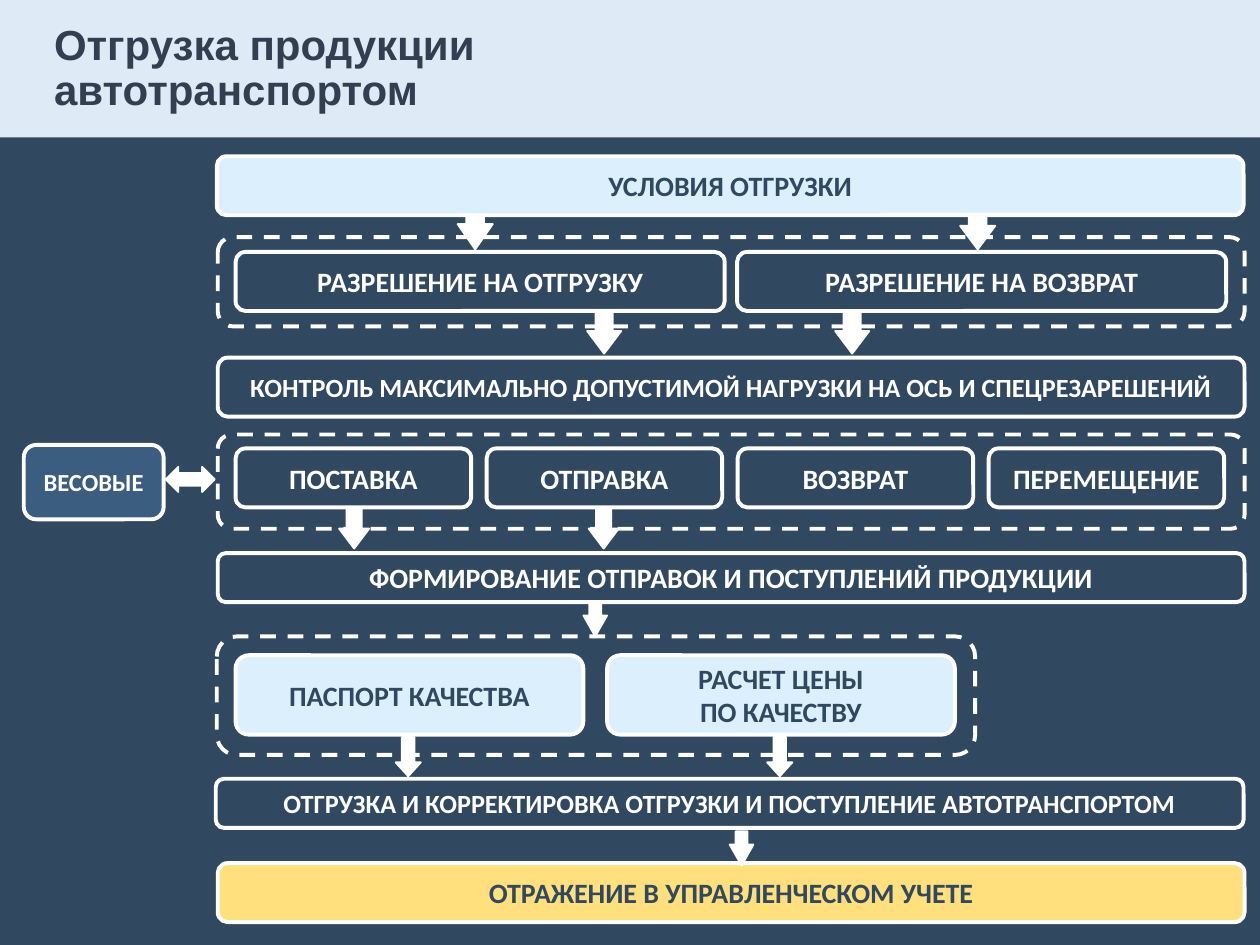
"""Build the slide with the flow of product shipment by road."""
from pptx import Presentation
from pptx.dml.color import RGBColor
from pptx.enum.dml import MSO_LINE
from pptx.enum.shapes import MSO_SHAPE
from pptx.enum.text import MSO_ANCHOR, PP_ALIGN
from pptx.util import Cm, Pt

COLORS = {"navy": "304961", "white": "FFFFFF", "pale": "DBF0FC", "band": "DEEBF7",
          "gold": "FFE07D", "blue": "3A5D80", "title": "333F50"}
TITLE = "Отгрузка продукции автотранспортом"

# text, left, top, width, height, fill, ink, size
BARS = [
    ("УСЛОВИЯ ОТГРУЗКИ", 4.37, 3.15, 20.7, 1.19, "pale", "navy", 16),
    ("КОНТРОЛЬ МАКСИМАЛЬНО ДОПУСТИМОЙ НАГРУЗКИ НА ОСЬ И СПЕЦРЕЗАРЕШЕНИЙ",
     4.39, 7.21, 20.7, 1.19, "navy", "white", 15),
    ("ФОРМИРОВАНИЕ ОТПРАВОК И ПОСТУПЛЕНИЙ ПРОДУКЦИИ",
     4.39, 11.15, 20.7, 0.99, "navy", "white", 16),
    ("ОТГРУЗКА И КОРРЕКТИРОВКА ОТГРУЗКИ И ПОСТУПЛЕНИЕ АВТОТРАНСПОРТОМ",
     4.35, 15.7, 20.72, 0.99, "navy", "white", 15),
    ("ОТРАЖЕНИЕ В УПРАВЛЕНЧЕСКОМ УЧЕТЕ", 4.39, 17.4, 20.7, 1.19, "gold", "navy", 16),
    ("ВЕСОВЫЕ", 0.48, 8.97, 2.82, 1.5, "blue", "white", 14),
]
# texts, top, width, height, step, fill, ink
ROWS = [
    (["РАЗРЕШЕНИЕ НА ОТГРУЗКУ", "РАЗРЕШЕНИЕ НА ВОЗВРАТ"],
     5.08, 9.86, 1.19, 10.11, "navy", "white"),
    (["ПОСТАВКА", "ОТПРАВКА", "ВОЗВРАТ", "ПЕРЕМЕЩЕНИЕ"],
     9.04, 4.75, 1.19, 5.06, "navy", "white"),
    (["ПАСПОРТ КАЧЕСТВА", "РАСЧЕТ ЦЕНЫ\vПО КАЧЕСТВУ"],
     13.21, 7.01, 1.6, 7.49, "pale", "navy"),
]
ROW_LEFT = 4.75
# left, top, width, height, corner
FRAMES = [(4.39, 4.78, 20.7, 1.8, 0.17), (4.39, 8.76, 20.7, 1.9, 0.15),
          (4.37, 12.83, 15.29, 2.39, 0.17)]
# middles, top, width, height, head
ARROWS = [
    ([9.58], 4.32, 0.71, 0.71, 0.72),
    ([19.71], 4.37, 0.71, 0.66, 0.72),
    ([12.18, 17.18], 6.27, 0.69, 0.86, 0.66),
    ([7.14, 12.17], 10.25, 0.61, 0.81, 0.66),
    ([12], 12.14, 0.48, 0.69, 0.88),
    ([8.23, 15.72], 14.86, 0.51, 0.79, 0.55),
    ([14.95], 16.76, 0.48, 0.69, 0.88),
]
LINK = (3.34, 9.41, 0.99, 0.51)


def color(name):
    return RGBColor.from_string(COLORS[name])


def draw(slide, kind, area, fill=None, weight=2.25):
    shape = slide.shapes.add_shape(kind, *map(Cm, area))
    shape.shadow.inherit = False
    if fill:
        shape.fill.solid()
        shape.fill.fore_color.rgb = color(fill)
    else:
        shape.fill.background()
    if weight:
        shape.line.color.rgb = color("white")
        shape.line.width = Pt(weight)
    else:
        shape.line.fill.background()
    return shape


def write(shape, text, face, size, ink, align):
    frame = shape.text_frame
    frame.word_wrap = True
    frame.vertical_anchor = MSO_ANCHOR.MIDDLE
    para = frame.paragraphs[0]
    para.text = text
    para.alignment = align
    font = para.font
    font.name, font.size, font.bold = face, Pt(size), True
    font.color.rgb = color(ink)
    return para


def add_box(slide, text, area, fill, ink, size=16):
    box = draw(slide, MSO_SHAPE.ROUNDED_RECTANGLE, area, fill)
    write(box, text, "Calibri", size, ink, PP_ALIGN.CENTER)


def main():
    deck = Presentation()
    deck.slide_width, deck.slide_height = Cm(25.4), Cm(19.05)
    slide = deck.slides.add_slide(deck.slide_layouts[6])
    slide.background.fill.solid()
    slide.background.fill.fore_color.rgb = color("navy")

    draw(slide, MSO_SHAPE.RECTANGLE, (0, 0, 25.4, 2.77), "band", 0)
    title = slide.shapes.add_textbox(*map(Cm, (0.84, 0.41, 15.39, 1.98)))
    write(title, TITLE, "Arial", 24, "title", PP_ALIGN.LEFT).line_spacing = 0.9

    for *area, corner in FRAMES:
        frame = draw(slide, MSO_SHAPE.ROUNDED_RECTANGLE, area)
        frame.adjustments[0] = corner
        frame.line.dash_style = MSO_LINE.DASH
    for text, *area, fill, ink, size in BARS:
        add_box(slide, text, area, fill, ink, size)
    for texts, top, width, height, step, fill, ink in ROWS:
        for i, text in enumerate(texts):
            add_box(slide, text, (ROW_LEFT + i * step, top, width, height), fill, ink)
    for mids, top, width, height, head in ARROWS:
        for mid in mids:
            area = (mid - width / 2, top, width, height)
            arrow = draw(slide, MSO_SHAPE.DOWN_ARROW, area, "white", 1)
            arrow.adjustments[1] = head
    draw(slide, MSO_SHAPE.LEFT_RIGHT_ARROW, LINK, "white", 1)
    deck.save("out.pptx")


if __name__ == "__main__":
    main()
